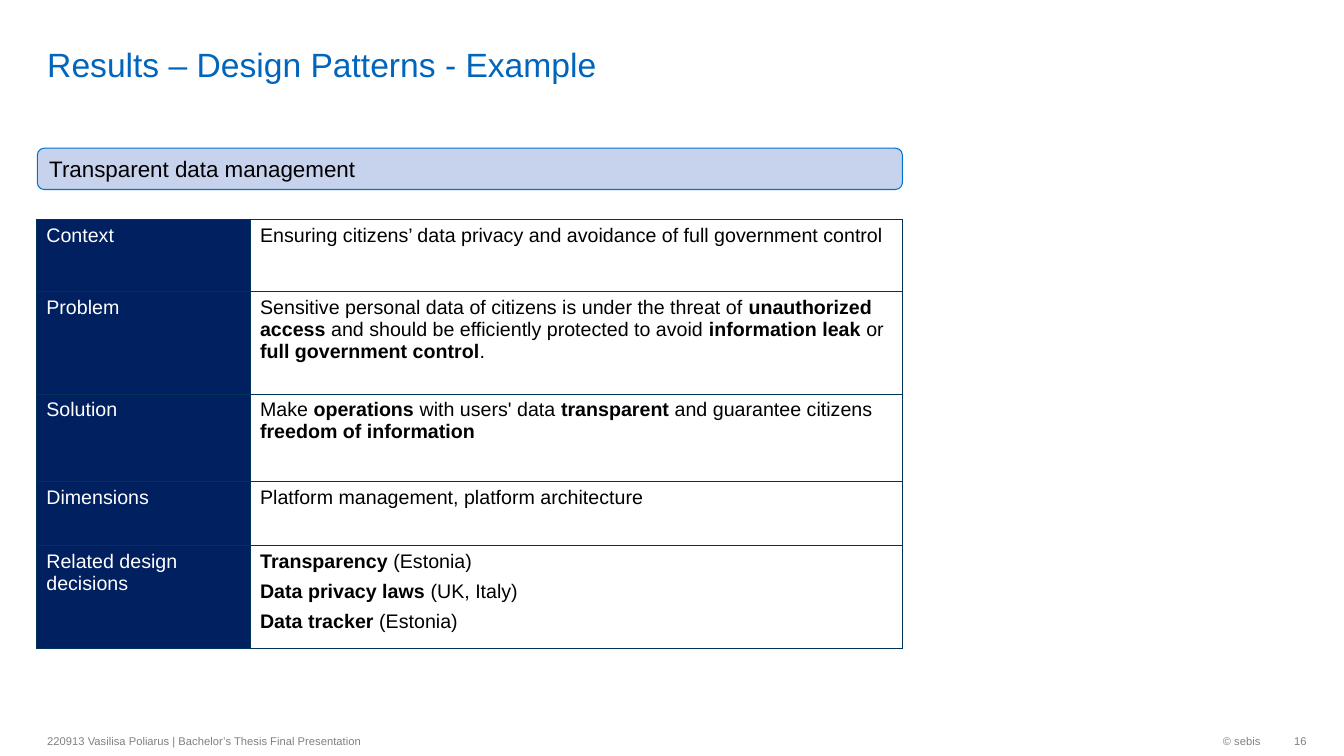
from dataclasses import dataclass
from typing import Any

from lxml.etree import SubElement
from pptx import Presentation
from pptx.dml.color import RGBColor
from pptx.enum.shapes import MSO_SHAPE
from pptx.enum.text import MSO_ANCHOR as Anchor, PP_ALIGN as Align
from pptx.oxml import parse_xml
from pptx.oxml.ns import nsdecls, qn
from pptx.util import Emu, Pt

EMU_PER_PX = 9144


@dataclass(frozen=True)
class Theme:
    font: str = "Arial"
    title: str = "0065BD"
    muted: str = "808080"
    black: str = "000000"
    white: str = "FFFFFF"
    navy: str = "002060"
    border: str = "003359"
    banner_fill: str = "A2B5E1"
    banner_line: str = "0073CF"
    title_size: int = 24
    banner_size: int = 16
    body_size: int = 14
    footer_size: int = 8
    line_width: float = 0.75


@dataclass(frozen=True)
class Box:
    left: int
    top: int
    width: int
    height: int

    def emu(self) -> tuple[Emu, ...]:
        return tuple(px(value) for value in (self.left, self.top, self.width, self.height))


@dataclass(frozen=True)
class Label:
    text: str
    box: Box
    size: int
    color: str
    align: Align = Align.LEFT
    anchor: Anchor = Anchor.MIDDLE
    right_inset: int = 10
    vertical_inset: int = 5


@dataclass(frozen=True)
class PatternRow:
    name: str
    description: str
    height: int
    space_after: int = 0


THEME = Theme()
SLIDE_WIDTH, SLIDE_HEIGHT = 1333, 750
BANNER = Box(37, 147, 858, 41)
TABLE_LEFT, TABLE_TOP = 36, 218
COLUMN_WIDTHS = (212, 647)

LABELS = (
    Label("Results – Design Patterns - Example", Box(37, 5, 1099, 79),
          THEME.title_size, THEME.title, anchor=Anchor.BOTTOM, vertical_inset=0),
    Label("220913 Vasilisa Poliarus | Bachelor’s Thesis Final Presentation",
          Box(37, 719, 473, 32), THEME.footer_size, THEME.muted),
    Label("© sebis", Box(1026, 719, 234, 32),
          THEME.footer_size, THEME.muted, align=Align.RIGHT),
    Label("16", Box(1260, 719, 36, 32),
          THEME.footer_size, THEME.muted, align=Align.RIGHT, right_inset=0),
)

PATTERN_ROWS = (
    PatternRow("Context",
               "Ensuring citizens’ data privacy and avoidance of full government control", 71),
    PatternRow("Problem",
               "Sensitive personal data of citizens is under the threat of **unauthorized access** "
               "and should be efficiently protected to avoid **information leak **or "
               "**full government control**.", 102),
    PatternRow("Solution",
               "Make **operations** with users' data **transparent **and guarantee citizens "
               "**freedom of information**", 87),
    PatternRow("Dimensions", "Platform management, platform architecture", 63),
    PatternRow("Related design decisions",
               "**Transparency** (Estonia)\n**Data privacy laws **(UK, Italy)\n"
               "**Data tracker **(Estonia)", 102, space_after=6),
)


def px(value: int) -> Emu:
    return Emu(value * EMU_PER_PX)


def write_text(frame: Any, text: str, *, size: int, color: str,
               align: Align = Align.LEFT, space_after: int = 0) -> None:
    frame.word_wrap = True
    for index, line in enumerate(text.split("\n")):
        paragraph = frame.add_paragraph() if index else frame.paragraphs[0]
        paragraph.alignment = align
        paragraph.space_after = Pt(space_after)
        for position, part in enumerate(line.split("**")):
            if not part:
                continue
            run = paragraph.add_run()
            run.text = part
            run.font.name = THEME.font
            run.font.size = Pt(size)
            run.font.bold = position % 2 == 1
            run.font.color.rgb = RGBColor.from_string(color)


def add_label(slide: Any, label: Label) -> None:
    frame = slide.shapes.add_textbox(*label.box.emu()).text_frame
    frame.vertical_anchor = label.anchor
    frame.margin_left = px(10)
    frame.margin_right = px(label.right_inset)
    frame.margin_top = frame.margin_bottom = px(label.vertical_inset)
    write_text(frame, label.text, size=label.size, color=label.color, align=label.align)


def add_banner(slide: Any, text: str) -> None:
    shape = slide.shapes.add_shape(MSO_SHAPE.ROUNDED_RECTANGLE, *BANNER.emu())
    shape.shadow.inherit = False
    shape.fill.solid()
    shape.fill.fore_color.rgb = RGBColor.from_string(THEME.banner_fill)
    fill_color = shape.fill._xPr.find(qn("a:solidFill")).find(qn("a:srgbClr"))
    SubElement(fill_color, qn("a:alpha"), val="60000")
    shape.line.color.rgb = RGBColor.from_string(THEME.banner_line)
    shape.line.width = Pt(THEME.line_width)
    shape.text_frame.vertical_anchor = Anchor.MIDDLE
    write_text(shape.text_frame, text, size=THEME.banner_size, color=THEME.black)


def fill_cell(cell: Any, text: str, *, fill: str, color: str, space_after: int = 0) -> None:
    cell.fill.solid()
    cell.fill.fore_color.rgb = RGBColor.from_string(fill)
    properties = cell._tc.get_or_add_tcPr()
    for index, side in enumerate(("lnL", "lnR", "lnT", "lnB")):
        properties.insert(index, parse_xml(
            f'<a:{side} {nsdecls("a")} w="{Pt(THEME.line_width)}"><a:solidFill>'
            f'<a:srgbClr val="{THEME.border}"/></a:solidFill></a:{side}>'))
    write_text(cell.text_frame, text, size=THEME.body_size, color=color,
               space_after=space_after)


def add_pattern_table(slide: Any) -> None:
    box = Box(TABLE_LEFT, TABLE_TOP, sum(COLUMN_WIDTHS),
              sum(row.height for row in PATTERN_ROWS))
    table = slide.shapes.add_table(len(PATTERN_ROWS), len(COLUMN_WIDTHS), *box.emu()).table
    table.first_row = table.horz_banding = False
    for column, width in zip(table.columns, COLUMN_WIDTHS):
        column.width = px(width)
    for index, row in enumerate(PATTERN_ROWS):
        table.rows[index].height = px(row.height)
        fill_cell(table.cell(index, 0), row.name, fill=THEME.navy, color=THEME.white)
        fill_cell(table.cell(index, 1), row.description, fill=THEME.white,
                  color=THEME.black, space_after=row.space_after)


def main() -> None:
    presentation = Presentation()
    presentation.slide_width, presentation.slide_height = px(SLIDE_WIDTH), px(SLIDE_HEIGHT)
    slide = presentation.slides.add_slide(presentation.slide_layouts[6])
    for label in LABELS:
        add_label(slide, label)
    add_banner(slide, "Transparent data management")
    add_pattern_table(slide)
    presentation.save("out.pptx")


if __name__ == "__main__":
    main()
